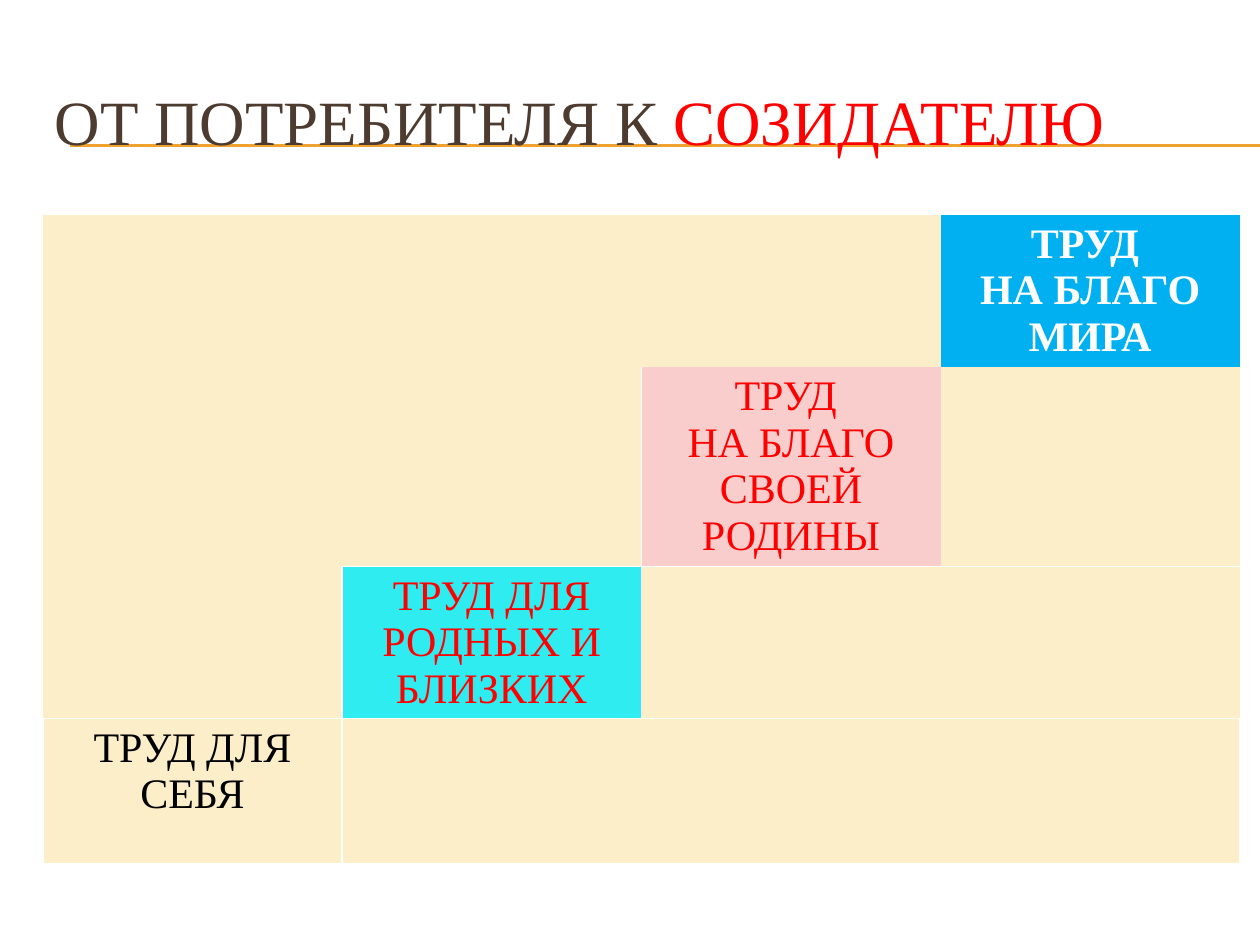
from lxml.etree import SubElement
from pptx import Presentation
from pptx.dml.color import RGBColor
from pptx.enum.shapes import MSO_CONNECTOR as Connector
from pptx.enum.text import MSO_ANCHOR as Anchor, PP_ALIGN as Align
from pptx.oxml import parse_xml
from pptx.oxml.ns import nsdecls, qn
from pptx.util import Pt

FONT = "Times New Roman"
NO_TABLE_STYLE = "{2D5ABB26-0587-4C30-8999-92F81FD0307C}"
COLORS = {
    "brown": "4E3B30", "red": "FF0000", "white": "FFFFFF", "black": "000000",
    "gold": "F0A22E", "cream": "FBEEC9", "blue": "00B0F0", "pink": "F8CDCC",
    "cyan": "2FECF1",
}
COLUMN_WIDTH = 171
ROW_HEIGHTS = (87, 114, 87, 83)
# Top row first: paragraphs, fill, text colour, bold,
# then the bordered sides of the step, the blank to its left and to its right.
STEPS = (
    (("ТРУД ", "НА БЛАГО МИРА"), "blue", "white", True, "", "", ""),
    (("ТРУД ", "НА БЛАГО СВОЕЙ РОДИНЫ"), "pink", "red", False, "LB", "R", "B"),
    (("ТРУД ДЛЯ РОДНЫХ И БЛИЗКИХ",), "cyan", "red", False, "LRTB", "RB", "LTB"),
    (("ТРУД ДЛЯ СЕБЯ",), "cream", "black", False, "LRTB", "", "LRTB"),
)


def rgb(name):
    return RGBColor.from_string(COLORS[name])


def add_run(paragraph, text, size, color, bold=False):
    run = paragraph.add_run()
    run.text = text
    run.font.name = FONT
    run.font.size = Pt(size)
    run.font.bold = bold
    run.font.color.rgb = rgb(color)


def add_rule(slide, top):
    rule = slide.shapes.add_connector(
        Connector.STRAIGHT, Pt(40), Pt(top), Pt(720), Pt(top))
    rule.line.color.rgb = rgb("gold")
    rule.line.width = Pt(0.75)
    SubElement(rule._element.spPr, qn("a:effectLst"))


def add_title(slide):
    title = slide.shapes.title
    title.left, title.top, title.width, title.height = map(Pt, (24, 36, 684, 66))
    slide.shapes._spTree.append(title._element)  # in front of the rules
    title.text_frame.vertical_anchor = Anchor.MIDDLE
    heading = title.text_frame.paragraphs[0]
    heading.alignment = Align.LEFT
    add_run(heading, "ОТ ПОТРЕБИТЕЛЯ К ", 36, "brown")
    add_run(heading, "СОЗИДАТЕЛЮ", 36, "red")


def format_cell(cell, fill, sides):
    """Fill the cell and draw white borders on the sides named by L, R, T, B."""
    cell.fill.solid()
    cell.fill.fore_color.rgb = rgb(fill)
    properties = cell._tc.get_or_add_tcPr()
    for position, side in enumerate(sides):
        properties.insert(position, parse_xml(
            f'<a:ln{side} {nsdecls("a")} w="{Pt(1)}"><a:solidFill>'
            f'<a:srgbClr val="{COLORS["white"]}"/></a:solidFill></a:ln{side}>'))


def add_blank(table, row, first, last, sides):
    """Merge the cells from first to last, if there are any."""
    if first > last:
        return
    if first < last:
        table.cell(row, first).merge(table.cell(row, last))
    for column in range(first, last + 1):
        format_cell(table.cell(row, column), "cream", sides)


def add_step(cell, paragraphs, fill, color, bold, sides):
    format_cell(cell, fill, sides)
    cell.margin_left = cell.margin_right = Pt(8)
    frame = cell.text_frame
    for index, text in enumerate(paragraphs):
        paragraph = frame.add_paragraph() if index else frame.paragraphs[0]
        paragraph.alignment = Align.CENTER
        add_run(paragraph, text, 24, color, bold)


def add_staircase(slide):
    count = len(STEPS)
    table = slide.shapes.add_table(
        count, count, Pt(24.5), Pt(122.75),
        Pt(COLUMN_WIDTH * count), Pt(sum(ROW_HEIGHTS))).table
    table.first_row = table.horz_banding = False
    table._tbl.tblPr.find(qn("a:tableStyleId")).text = NO_TABLE_STYLE
    for column in table.columns:
        column.width = Pt(COLUMN_WIDTH)
    for row, (*step, left_sides, right_sides) in enumerate(STEPS):
        table.rows[row].height = Pt(ROW_HEIGHTS[row])
        position = count - 1 - row
        add_blank(table, row, 0, position - 1, left_sides)
        add_step(table.cell(row, position), *step)
        add_blank(table, row, position + 1, count - 1, right_sides)


def main():
    deck = Presentation()
    deck.slide_width, deck.slide_height = Pt(720), Pt(540)
    slide = deck.slides.add_slide(deck.slide_layouts[5])
    for top in (82.8, 83.5):
        add_rule(slide, top)
    add_title(slide)
    add_staircase(slide)
    deck.save("out.pptx")


if __name__ == "__main__":
    main()
